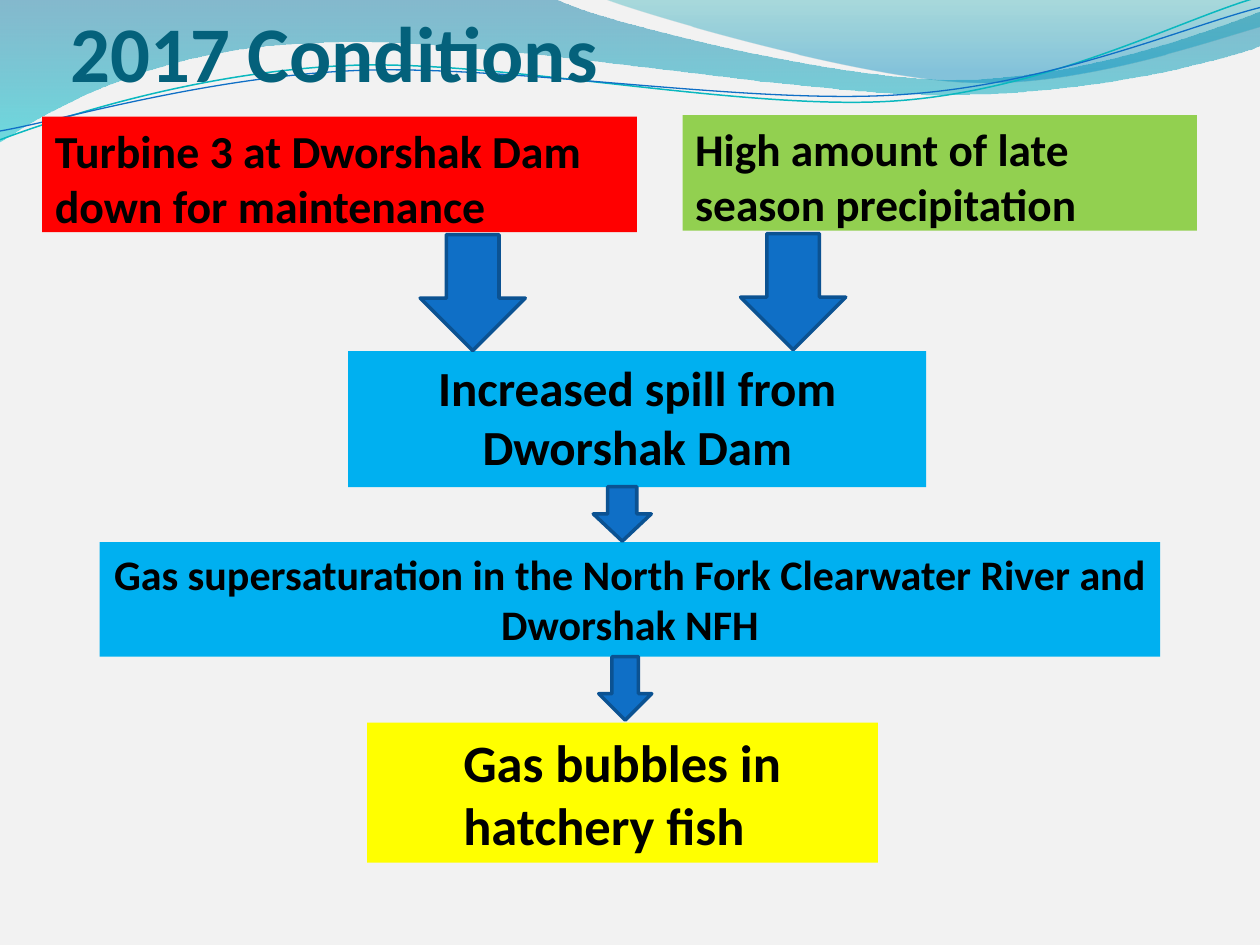
from lxml import etree
from pptx import Presentation
from pptx.dml.color import RGBColor
from pptx.enum.shapes import MSO_SHAPE
from pptx.enum.text import MSO_ANCHOR, MSO_AUTO_SIZE, PP_ALIGN
from pptx.oxml.ns import qn
from pptx.util import Cm, Pt

RECTANGLE = MSO_SHAPE.RECTANGLE
DOWN_ARROW = MSO_SHAPE.DOWN_ARROW
TOP, BOTTOM = MSO_ANCHOR.TOP, MSO_ANCHOR.BOTTOM
LEFT, CENTER = PP_ALIGN.LEFT, PP_ALIGN.CENTER

FONT = "Calibri"
BLACK = RGBColor(0x00, 0x00, 0x00)
BACKGROUND = RGBColor(0xF2, 0xF2, 0xF2)
TITLE_TEAL = RGBColor(0x04, 0x61, 0x7B)
RED = RGBColor(0xFF, 0x00, 0x00)
GREEN = RGBColor(0x92, 0xD0, 0x50)
SKY = RGBColor(0x00, 0xB0, 0xF0)
YELLOW = RGBColor(0xFF, 0xFF, 0x00)
BLUE = RGBColor(0x0F, 0x6F, 0xC6)
DARK_BLUE = RGBColor(0x0B, 0x52, 0x92)
TURQUOISE = RGBColor(0x0A, 0xB8, 0xBF)
WAVE_BLUE = RGBColor(0x00, 0x74, 0xA1)
WAVE_CYAN = RGBColor(0x00, 0xC6, 0xCF)
CREST_TEAL = RGBColor(0x00, 0xA1, 0xA9)
CREST_BLUE = RGBColor(0x00, 0x8B, 0xBF)

# Wave outlines in inches: two numbers are a corner, six are a Bezier curve
UNITS_PER_INCH = 100
WIDE_WAVE = [
    (0, 0), (4.4, -0.01),
    (4.76, 0.17, 6.64, 0.63, 7.58, 0.63), (8.53, 0.63, 9.58, 0.26, 10, 0.09),
    (10.01, 0.36),
    (9.83, 0.44, 8.7, 0.76, 7.46, 0.75), (6.22, 0.75, 3.82, 0.28, 2.57, 0.34),
    (1.29, 0.36, 0.46, 0.83, -0.01, 1.13)]
RIGHT_CREST = [
    (4.79, -0.01),
    (5.09, 0.11, 6.82, 0.62, 7.69, 0.65), (8.56, 0.69, 9.61, 0.32, 10, 0.21),
    (10, 0)]
TURQUOISE_LINE = [
    (0, 1.11),
    (0.48, 0.93, 1.58, 0.57, 2.77, 0.52), (3.95, 0.47, 5.93, 0.89, 7.13, 0.8),
    (8.33, 0.71, 9.38, 0.15, 9.98, -0.02)]
BLUE_LINE = [
    (0, 1.04),
    (0.47, 0.96, 1.64, 0.61, 2.83, 0.56), (4.03, 0.51, 5.97, 0.84, 7.17, 0.75),
    (8.36, 0.67, 9.41, 0.21, 10, 0.06)]


def bend(wave, outline):
    """Join each three line segments that stand for a curve into one curve."""
    segments = iter(list(wave.element.iter(qn("a:lnTo"))))
    for step in outline[1:]:
        first = next(segments)
        if len(step) == 6:
            first.tag = qn("a:cubicBezTo")
            for _ in range(2):
                segment = next(segments)
                first.append(segment[0])
                segment.getparent().remove(segment)


def add_wave(slide, depth, outline, close):
    """Draw an outline and move it behind the content, onto the layout."""
    start, *rest = [(round(step[i] * UNITS_PER_INCH), round(step[i + 1] * UNITS_PER_INCH))
                    for step in outline for i in range(0, len(step), 2)]
    builder = slide.shapes.build_freeform(*start, scale=Cm(2.54) / UNITS_PER_INCH)
    builder.add_line_segments(rest, close=close)
    wave = builder.convert_to_shape()
    bend(wave, outline)
    wave.shadow.inherit = False
    next(wave.element.iter(qn("p:cNvPr"))).set("id", str(100 + depth))
    slide.slide_layout.shapes.element.insert(2 + depth, wave.element)
    return wave


def add_wave_fill(slide, depth, outline, stops):
    wave = add_wave(slide, depth, outline, True)
    wave.line.fill.background()
    wave.fill.gradient()
    wave.fill.gradient_angle = 270
    for stop, (position, color, _) in zip(wave.fill.gradient_stops, stops):
        stop.position = position
        stop.color.rgb = color
    for color_xml, (_, _, opacity) in zip(wave.element.iter(qn("a:srgbClr")), stops):
        etree.SubElement(color_xml, qn("a:alpha"), val=str(opacity * 1000))


def add_wave_line(slide, depth, outline, color, width):
    wave = add_wave(slide, depth, outline, False)
    wave.fill.background()
    wave.line.color.rgb = color
    wave.line.width = Pt(width)


def place(shape, left, top, width, height):
    shape.left, shape.top = Cm(left), Cm(top)
    shape.width, shape.height = Cm(width), Cm(height)


def write(shape, text, size, color=BLACK, align=LEFT, anchor=TOP):
    frame = shape.text_frame
    frame.word_wrap = True
    frame.auto_size = MSO_AUTO_SIZE.NONE
    frame.vertical_anchor = anchor
    paragraph = frame.paragraphs[0]
    paragraph.alignment = align
    run = paragraph.add_run()
    run.text = text
    run.font.name = FONT
    run.font.size = Pt(size)
    run.font.bold = True
    run.font.color.rgb = color
    return frame


def fill_title(title, text):
    place(title, 1.42, 0.2, 22.86, 1.78)
    frame = write(title, text, 45, TITLE_TEAL, anchor=BOTTOM)
    frame.margin_left = frame.margin_right = frame.margin_bottom = 0


def fill_cause(body, text, size, color, box):
    place(body, *box)
    body.fill.solid()
    body.fill.fore_color.rgb = color
    frame = write(body, text, size)
    properties = frame.paragraphs[0]._p.get_or_add_pPr()
    properties.set("marL", "0")
    properties.set("indent", "0")
    etree.SubElement(properties, qn("a:buNone"))


def add_solid(slide, preset, color, box):
    shape = slide.shapes.add_shape(preset, *(Cm(length) for length in box))
    shape.shadow.inherit = False
    shape.fill.solid()
    shape.fill.fore_color.rgb = color
    return shape


def add_effect(slide, text, size, color, box, align=CENTER, anchor=TOP):
    effect = add_solid(slide, RECTANGLE, color, box)
    effect.line.fill.background()
    return write(effect, text, size, align=align, anchor=anchor)


def add_arrow(slide, box):
    arrow = add_solid(slide, DOWN_ARROW, BLUE, box)
    arrow.line.color.rgb = DARK_BLUE
    arrow.line.width = Pt(2)


def main():
    presentation = Presentation()
    presentation.slide_width, presentation.slide_height = Cm(25.4), Cm(19.05)
    slide = presentation.slides.add_slide(
        presentation.slide_layouts.get_by_name("Two Content"))
    slide.background.fill.solid()
    slide.background.fill.fore_color.rgb = BACKGROUND

    # Waves behind the title
    add_wave_fill(slide, 0, WIDE_WAVE, [(0, WAVE_BLUE, 45), (1, WAVE_CYAN, 55)])
    add_wave_fill(slide, 1, RIGHT_CREST, [(0, CREST_TEAL, 30), (0.8, CREST_BLUE, 45)])
    add_wave_line(slide, 2, TURQUOISE_LINE, TURQUOISE, 0.85)
    add_wave_line(slide, 3, BLUE_LINE, BLUE, 0.75)

    # Title and the two causes
    title, turbine, precipitation = slide.placeholders
    fill_title(title, "2017 Conditions")
    fill_cause(turbine, "Turbine 3 at Dworshak Dam down for maintenance",
               26.2, RED, (0.85, 2.35, 11.99, 2.33))
    fill_cause(precipitation, "High amount of late season precipitation",
               25.9, GREEN, (13.76, 2.32, 10.37, 2.33))

    # Chain of effects
    add_effect(slide, "Increased spill from Dworshak Dam",
               28, SKY, (7.02, 7.08, 11.65, 2.74))
    add_effect(slide, "Gas supersaturation in the North Fork Clearwater River and Dworshak NFH",
               24, SKY, (2.01, 10.93, 21.38, 2.31))
    bubbles = add_effect(slide, "Gas bubbles in hatchery fish",
                         30, YELLOW, (7.4, 14.57, 10.3, 2.82), LEFT, BOTTOM)
    bubbles.margin_left = Cm(1.94)

    # Arrows from cause to effect
    for box in [(8.47, 4.73, 2.12, 2.34), (14.93, 4.71, 2.12, 2.34),
                (11.96, 9.81, 1.17, 1.1), (12.07, 13.24, 1.07, 1.28)]:
        add_arrow(slide, box)

    presentation.save("out.pptx")


if __name__ == "__main__":
    main()
